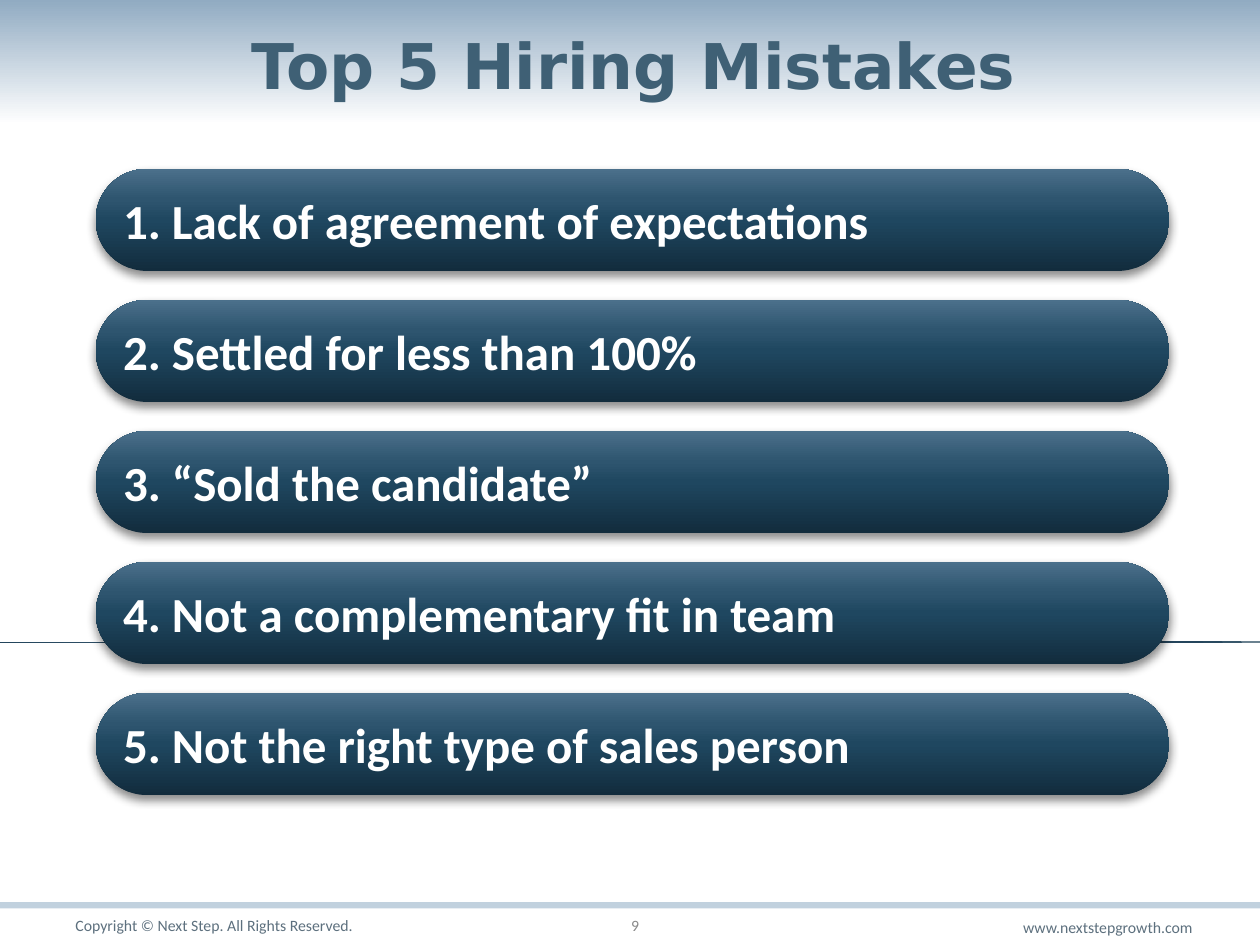
import pptx
import pptx.util
import pptx.oxml
import pptx.oxml.ns
import pptx.dml.color
import pptx.enum.shapes
import pptx.enum.text

Inches, Pt = pptx.util.Inches, pptx.util.Pt
KIND = pptx.enum.shapes.MSO_SHAPE
ALIGN = pptx.enum.text.PP_ALIGN
ANCHOR = pptx.enum.text.MSO_ANCHOR

COLORS = {"title": "3F6075", "item": "FFFFFF", "foot": "5D707E",
          "number": "898989", "band": "C1D1DE"}
HEAD_FADE = [(0, "FFFFFF"), (100, "91ABC2")]
RULE_FADE = [(0, "1C3F56"), (55, "637E94"), (100, "1C3F56")]
ITEM_FADE = [(0, "122C3D"), (50, "1F4760"), (70, "2E556F"), (100, "4B708B")]

TITLE = "Top 5 Hiring Mistakes"
ITEMS = ["Lack of agreement of expectations",
         "Settled for less than 100%",
         "“Sold the candidate”",
         "Not a complementary fit in team",
         "Not the right type of sales person"]
FOOTERS = [  # text, box, alignment, colour
    ("Copyright © Next Step. All Rights Reserved.",
     (0.5, 7.2, 3.29, 0.29), ALIGN.LEFT, "foot"),
    ("www.nextstepgrowth.com ", (6.12, 7.22, 3.47, 0.28), ALIGN.RIGHT, "foot"),
    ("9", (4.54, 7.2, 1, 0.29), ALIGN.CENTER, "number"),
]
TOP, PITCH = 1.34, 1.04


def rgb(name):
    return pptx.dml.color.RGBColor.from_string(COLORS[name])


def add_shape(slide, kind, box):
    shape = slide.shapes.add_shape(kind, *map(Inches, box))
    shape.shadow.inherit = False
    shape.line.fill.background()
    return shape


def fade(shape, stops, angle):
    """Fill with a linear gradient; the angle runs clockwise in degrees."""
    marks = "".join(f'<a:gs pos="{pos * 1000}"><a:srgbClr val="{color}"/></a:gs>'
                    for pos, color in stops)
    grad = pptx.oxml.parse_xml(
        f'<a:gradFill {pptx.oxml.ns.nsdecls("a")} rotWithShape="1">'
        f'<a:gsLst>{marks}</a:gsLst>'
        f'<a:lin ang="{angle * 60000}" scaled="0"/></a:gradFill>')
    shape.fill.background()
    props = shape.element.spPr
    props.replace(props.find(pptx.oxml.ns.qn("a:noFill")), grad)


def cast_shadow(shape):
    effects = shape.element.spPr.find(pptx.oxml.ns.qn("a:effectLst"))
    effects.append(pptx.oxml.parse_xml(
        f'<a:outerShdw {pptx.oxml.ns.nsdecls("a")} blurRad="{Pt(5)}" '
        f'dist="{Pt(3)}" dir="5400000" rotWithShape="0">'
        '<a:srgbClr val="000000"><a:alpha val="45000"/></a:srgbClr>'
        '</a:outerShdw>'))


def write(shape, text, size, color, align=ALIGN.LEFT, bold=False,
          face="Calibri", anchor=ANCHOR.MIDDLE):
    frame = shape.text_frame
    frame.word_wrap = True
    frame.vertical_anchor = anchor
    para = frame.paragraphs[0]
    para.text = text
    para.alignment = align
    font = para.font
    font.name, font.size, font.bold = face, Pt(size), bold
    font.color.rgb = rgb(color)


def add_text(slide, box, *args, **style):
    write(slide.shapes.add_textbox(*map(Inches, box)), *args, **style)


def main():
    deck = pptx.Presentation()
    deck.slide_width, deck.slide_height = Inches(10), Inches(7.5)
    slide = deck.slides.add_slide(deck.slide_layouts[6])

    rule = add_shape(slide, KIND.RIGHT_TRIANGLE, (0, 5.09, 10, 0.01))
    rule.element.spPr.xfrm.set("flipH", "1")
    fade(rule, RULE_FADE, 50)

    for text, box, align, color in FOOTERS:
        add_text(slide, box, text, 9, color, align)

    fade(add_shape(slide, KIND.RECTANGLE, (0, 0, 10, 0.99)), HEAD_FADE, 270)
    band = add_shape(slide, KIND.RECTANGLE, (0, 7.16, 10, 0.05))
    band.fill.solid()
    band.fill.fore_color.rgb = rgb("band")

    add_text(slide, (0.53, 0.16, 9, 1.02), TITLE, 36, "title", ALIGN.CENTER,
             bold=True, face="DejaVu Sans", anchor=ANCHOR.TOP)

    for i, item in enumerate(ITEMS):
        pill = add_shape(slide, KIND.ROUNDED_RECTANGLE,
                         (0.76, TOP + i * PITCH, 8.52, 0.81))
        pill.adjustments[0] = 0.5
        fade(pill, ITEM_FADE, 270)
        cast_shadow(pill)
        write(pill, f"{i + 1}. {item}", 28, "item", bold=True)

    deck.save("out.pptx")


if __name__ == "__main__":
    main()
